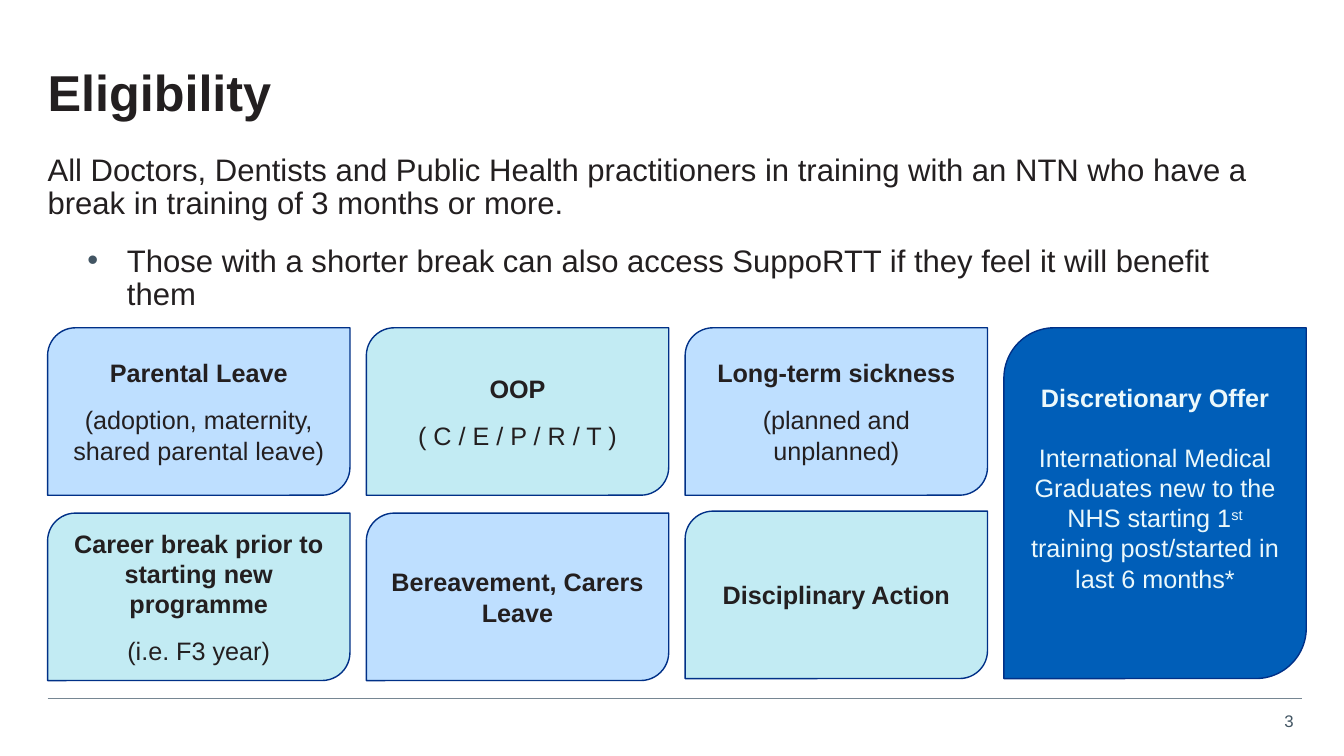
from dataclasses import dataclass

from lxml import etree
from pptx import Presentation
from pptx import util as u
from pptx.dml.color import RGBColor
from pptx.enum import shapes, text
from pptx.oxml import ns


@dataclass(frozen=True)
class Theme:
    font: str = "Arial"
    ink: str = "231F20"
    slate: str = "425563"
    rule: str = "768692"
    outline: str = "003087"
    sky: str = "BEDFFF"
    aqua: str = "C2EBF3"
    blue: str = "005EB8"
    pale: str = "EBF8FB"
    title_size: float = 36
    body_size: float = 22.2
    card_size: float = 18
    number_size: float = 12


THEME = Theme()
NO_INSETS = dict(margin_left=0, margin_top=0, margin_right=0, margin_bottom=0)

# Heading and detail of each card, by column and row
COLUMNS = [
    [("Parental Leave", "(adoption, maternity, shared parental leave)"),
     ("Career break prior to starting new programme", "(i.e. F3 year)")],
    [("OOP", "( C / E / P / R / T )"),
     ("Bereavement, Carers Leave", None)],
    [("Long-term sickness", "(planned and unplanned)"),
     ("Disciplinary Action", None)],
]


def apply(target, values):
    for name, value in values.items():
        setattr(target, name, value)


def add_run(paragraph, words, size, color=THEME.ink, bold=False):
    run = paragraph.add_run()
    run.text = words
    apply(run.font, dict(name=THEME.font, size=u.Pt(size), bold=bold))
    run.font.color.rgb = RGBColor.from_string(color)
    return run


def set_bullet(paragraph, margin, indent, char=None):
    props = paragraph._p.get_or_add_pPr()
    props.set("marL", str(margin))
    props.set("indent", str(indent))
    if char is None:
        etree.SubElement(props, ns.qn("a:buNone"))
        return
    bullet_color = etree.SubElement(props, ns.qn("a:buClr"))
    etree.SubElement(bullet_color, ns.qn("a:srgbClr"), val=THEME.slate)
    etree.SubElement(props, ns.qn("a:buFont"), typeface=THEME.font)
    etree.SubElement(props, ns.qn("a:buChar"), char=char)


def place(placeholder, left, top, width, height, anchor):
    apply(placeholder, dict(left=left, top=top, width=width, height=height))
    frame = placeholder.text_frame
    apply(frame, dict(NO_INSETS, word_wrap=True, vertical_anchor=anchor,
                      auto_size=text.MSO_AUTO_SIZE.NONE))
    return frame


def fill_title(slide, left, top, width, height):
    frame = place(slide.shapes.title, left, top, width, height, text.MSO_ANCHOR.MIDDLE)
    heading = frame.paragraphs[0]
    apply(heading, dict(alignment=text.PP_ALIGN.LEFT, line_spacing=0.9, space_before=u.Pt(0)))
    add_run(heading, "Eligibility", THEME.title_size, bold=True)


def fill_body(slide, left, top, width, height):
    frame = place(slide.placeholders[1], left, top, width, height, text.MSO_ANCHOR.TOP)
    rule = frame.paragraphs[0]
    set_bullet(rule, 0, 0)
    add_run(rule, "All Doctors, Dentists and Public Health practitioners in training "
                  "with an NTN who have a break in training of 3 months or more.",
            THEME.body_size)
    exception = frame.add_paragraph()
    exception.level = 1
    set_bullet(exception, u.Cm(2), u.Cm(-1), "•")
    add_run(exception, "Those with a shorter break can also access SuppoRTT "
                       "if they feel it will benefit them", THEME.body_size)
    for paragraph, before in ((rule, 0), (exception, 5)):
        apply(paragraph, dict(line_spacing=0.9, space_before=u.Pt(before),
                              space_after=u.Pt(12)))


def add_card(slide, left, top, width, height, fill):
    card = slide.shapes.add_shape(shapes.MSO_SHAPE.ROUND_2_DIAG_RECTANGLE,
                                  left, top, width, height)
    card.shadow.inherit = False
    card.fill.solid()
    card.fill.fore_color.rgb = RGBColor.from_string(fill)
    card.line.color.rgb = RGBColor.from_string(THEME.outline)
    card.line.width = u.Pt(1)
    apply(card.text_frame, dict(word_wrap=True, vertical_anchor=text.MSO_ANCHOR.MIDDLE))
    return card.text_frame


def add_reason(slide, left, top, width, height, fill, heading, detail):
    frame = add_card(slide, left, top, width, height, fill)
    add_run(frame.paragraphs[0], heading, THEME.card_size, bold=True)
    if detail:
        add_run(frame.add_paragraph(), detail, THEME.card_size)
    for paragraph in frame.paragraphs:
        apply(paragraph, dict(alignment=text.PP_ALIGN.CENTER, space_after=u.Pt(12)))


def add_discretionary_offer(slide, left, top, width, height):
    frame = add_card(slide, left, top, width, height, THEME.blue)
    frame.margin_bottom = u.Cm(0.9)
    heading = frame.paragraphs[0]
    heading.space_after = u.Pt(21)
    add_run(heading, "Discretionary Offer", THEME.card_size, THEME.pale, bold=True)
    offer = frame.add_paragraph()
    for words, baseline in (
            ("International Medical Graduates new to the NHS starting 1", 0),
            ("st", 30000),
            (" training post/started in last 6 months*", 0)):
        run = add_run(offer, words, THEME.card_size, THEME.pale)
        run.font._element.set("baseline", str(baseline))
    for paragraph in frame.paragraphs:
        paragraph.alignment = text.PP_ALIGN.CENTER


def add_cards(slide, left, top, width, height):
    card_width, card_height = u.Cm(7.62), u.Cm(4.22)
    pitch = (width - card_width) // len(COLUMNS)
    last = len(COLUMNS) - 1
    for column, reasons in enumerate(COLUMNS):
        # The last column ends level with the tall card, the others just below
        bottom = top + height + (0 if column == last else u.Cm(0.05))
        for row, (heading, detail) in enumerate(reasons):
            card_top = bottom - card_height if row else top
            fill = THEME.aqua if (column + row) % 2 else THEME.sky
            add_reason(slide, left + column * pitch, card_top, card_width, card_height,
                       fill, heading, detail)
    add_discretionary_offer(slide, left + len(COLUMNS) * pitch, top, card_width, height)


def add_footer(slide, left, top, width, height):
    rule = slide.shapes.add_connector(shapes.MSO_CONNECTOR.STRAIGHT,
                                      left, top, left + width, top)
    rule.line.color.rgb = RGBColor.from_string(THEME.rule)
    rule.line.width = u.Pt(0.5)
    etree.SubElement(rule._element.spPr, ns.qn("a:effectLst"))

    number_width, number_height = u.Cm(1.04), u.Cm(0.77)
    number = slide.shapes.add_textbox(left + width - number_width + u.Cm(0.05),
                                      top + height - number_height,
                                      number_width, number_height)
    number.text_frame.word_wrap = True
    page = number.text_frame.paragraphs[0]
    page.alignment = text.PP_ALIGN.RIGHT
    add_run(page, "3", THEME.number_size, THEME.slate)


def main():
    prs = Presentation()
    apply(prs, dict(slide_width=u.Cm(33.87), slide_height=u.Cm(19.05)))
    slide = prs.slides.add_slide(prs.slide_layouts[1])
    left = u.Cm(1.2)
    add_footer(slide, left, u.Cm(17.6), u.Cm(31.6), u.Cm(0.95))
    fill_body(slide, left, u.Cm(3.89), u.Cm(30.8), u.Cm(4.62))
    fill_title(slide, left, u.Cm(1.2), u.Cm(31.67), u.Cm(2.41))
    add_cards(slide, left, u.Cm(8.26), u.Cm(31.72), u.Cm(8.84))
    prs.save("out.pptx")


if __name__ == "__main__":
    main()
